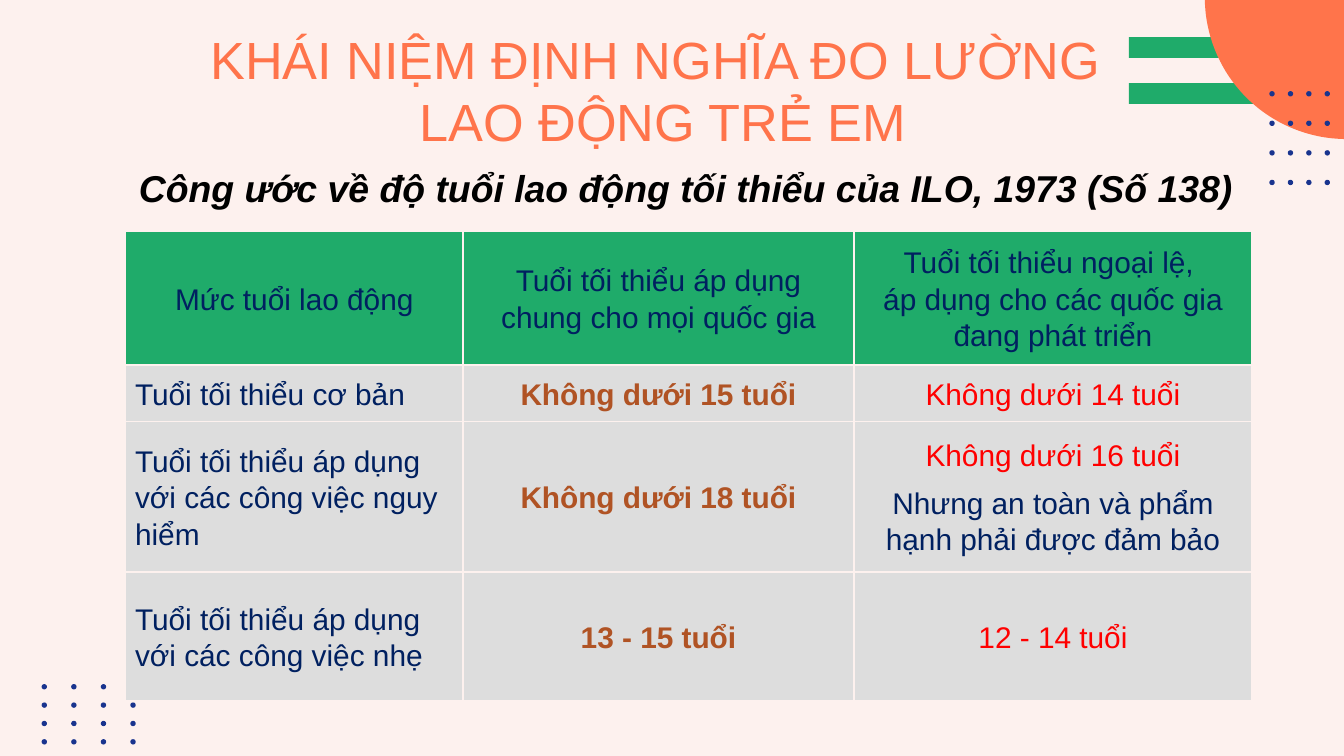
from copy import deepcopy
from itertools import product
from math import cos, pi, sin

from lxml.etree import SubElement
from pptx import Presentation
from pptx.dml.color import RGBColor
from pptx.enum.shapes import MSO_SHAPE as SHAPE
from pptx.enum.text import MSO_ANCHOR as ANCHOR, MSO_AUTO_SIZE as AUTO, PP_ALIGN as ALIGN
from pptx.oxml.ns import qn
from pptx.util import Inches, Pt

WIDTH = Inches(10)
HEIGHT = WIDTH * 9 // 16
CREAM, GREEN, ORANGE, GREY = "FDF1EE", "1FAB6A", "FF744B", "DDDDDD"
DOT, NAVY, BROWN, RED = "19348E", "002060", "B05324", "FF0000"

COLUMNS = [25.1, 29.1, 29.6]
ROWS = [17.7, 7.45, 19.95, 17]
HEADINGS = [
    "Mức tuổi lao động",
    "Tuổi tối thiểu áp dụng chung cho mọi quốc gia",
    "Tuổi tối thiểu ngoại lệ, \váp dụng cho các quốc gia đang phát triển",
]
LEVELS = [
    ("Tuổi tối thiểu cơ bản", "Không dưới 15 tuổi", ["Không dưới 14 tuổi"]),
    ("Tuổi tối thiểu áp dụng với các công việc nguy hiểm", "Không dưới 18 tuổi",
     ["Không dưới 16 tuổi", "Nhưng an toàn và phẩm hạnh phải được đảm bảo"]),
    ("Tuổi tối thiểu áp dụng với các công việc nhẹ", "13 - 15 tuổi", ["12 - 14 tuổi"]),
]


def rgb(color):
    return RGBColor.from_string(color)


def x(percent):
    return round(WIDTH * percent / 100)


def y(percent):
    return round(HEIGHT * percent / 100)


def box(left, top, width, height):
    return x(left), y(top), x(width), y(height)


def paint(sp, color):
    sp.shadow.inherit = False
    sp.fill.solid()
    sp.fill.fore_color.rgb = rgb(color)
    sp.line.fill.background()


def write(p, text, size=16, color=NAVY, bold=False, italic=False, align=ALIGN.LEFT):
    p.text = text
    p.alignment = align
    for r in p.runs:
        r.font.name = "Arial"
        r.font.size = Pt(size)
        r.font.bold = bold
        r.font.italic = italic
        r.font.color.rgb = rgb(color)
    for br in p._p.findall(qn("a:br")):
        br.append(deepcopy(p.runs[0].font._element))


def add_shape(s, kind, place, color):
    paint(s.shapes.add_shape(kind, *box(*place)), color)


def add_dots(s, left, top, dx, dy):
    for row, col in product(range(4), repeat=2):
        add_shape(s, SHAPE.OVAL, (left + col * dx, top + row * dy, 0.4, 0.71), DOT)


def add_quarter_disc(s, cx, cy, radius, color):
    angles = [pi / 2 * (1 + i / 60) for i in range(61)]
    arc = [(cx + radius * cos(a), cy + radius * sin(a)) for a in angles]
    fb = s.shapes.build_freeform(cx, cy, scale=1.0)
    fb.add_line_segments(arc, close=True)
    paint(fb.convert_to_shape(), color)


def add_title(s, text):
    title = s.shapes.title
    s.shapes.element.append(title.element)
    title.left, title.top, title.width, title.height = box(7.15, 1.78, 84.3, 11.2)
    tf = title.text_frame
    tf.word_wrap = True
    tf.auto_size = AUTO.NONE
    tf.vertical_anchor = ANCHOR.TOP
    tf.margin_left = tf.margin_right = tf.margin_top = tf.margin_bottom = Inches(0.1)
    write(tf.paragraphs[0], text, size=28, color=ORANGE, align=ALIGN.CENTER)


def add_subtitle(s, text):
    tf = s.shapes.add_textbox(*box(9.35, 20.98, 88.7, 7.82)).text_frame
    tf.word_wrap = True
    write(tf.paragraphs[0], text, size=20, color="000000", bold=True, italic=True)


def add_borders(cell):
    tc_pr = cell._tc.get_or_add_tcPr()
    for i, side in enumerate(("a:lnL", "a:lnR", "a:lnT", "a:lnB")):
        ln = tc_pr.makeelement(qn(side), {"w": str(Pt(1))})
        tc_pr.insert(i, ln)
        SubElement(SubElement(ln, qn("a:solidFill")), qn("a:srgbClr"), val=CREAM)


def fill_cell(cell, texts, fill, colors=(NAVY,), **fmt):
    cell.fill.solid()
    cell.fill.fore_color.rgb = rgb(fill)
    cell.vertical_anchor = ANCHOR.MIDDLE
    cell.margin_left = cell.margin_right = Inches(0.07)
    cell.margin_top = cell.margin_bottom = 0
    add_borders(cell)
    tf = cell.text_frame
    for i, (text, color) in enumerate(zip(texts, colors)):
        p = tf.add_paragraph() if i else tf.paragraphs[0]
        p.line_spacing = 1.1
        p.space_before = p.space_after = Pt(3)
        write(p, text, color=color, **fmt)


def add_age_table(s):
    place = box(9.35, 30.6, sum(COLUMNS), sum(ROWS))
    table = s.shapes.add_table(len(ROWS), len(COLUMNS), *place).table
    for column, width in zip(table.columns, COLUMNS):
        column.width = x(width)
    for row, height in zip(table.rows, ROWS):
        row.height = y(height)
    for col, heading in enumerate(HEADINGS):
        fill_cell(table.cell(0, col), [heading], GREEN, align=ALIGN.CENTER)
    for row, (level, general, exception) in enumerate(LEVELS, 1):
        fill_cell(table.cell(row, 0), [level], GREY)
        fill_cell(table.cell(row, 1), [general], GREY, [BROWN], bold=True, align=ALIGN.CENTER)
        fill_cell(table.cell(row, 2), exception, GREY, [RED, NAVY], align=ALIGN.CENTER)


def main():
    prs = Presentation()
    prs.slide_width, prs.slide_height = WIDTH, HEIGHT
    s = prs.slides.add_slide(prs.slide_layouts[5])
    s.background.fill.solid()
    s.background.fill.fore_color.rgb = rgb(CREAM)
    add_dots(s, 3.1, 90.49, 2.2, 2.43)
    for top in (10.98, 4.91):
        add_shape(s, SHAPE.RECTANGLE, (84, top, 11.3, 2.75), GREEN)
    add_quarter_disc(s, x(100.2), x(-0.2), x(10.55), ORANGE)
    add_dots(s, 94.45, 12.05, 1.37, 3.91)
    add_title(s, "KHÁI NIỆM ĐỊNH NGHĨA ĐO LƯỜNG \vLAO ĐỘNG TRẺ EM")
    add_subtitle(s, "Công ước về độ tuổi lao động tối thiểu của ILO, 1973 (Số 138)")
    add_age_table(s)
    prs.save("out.pptx")


if __name__ == "__main__":
    main()
